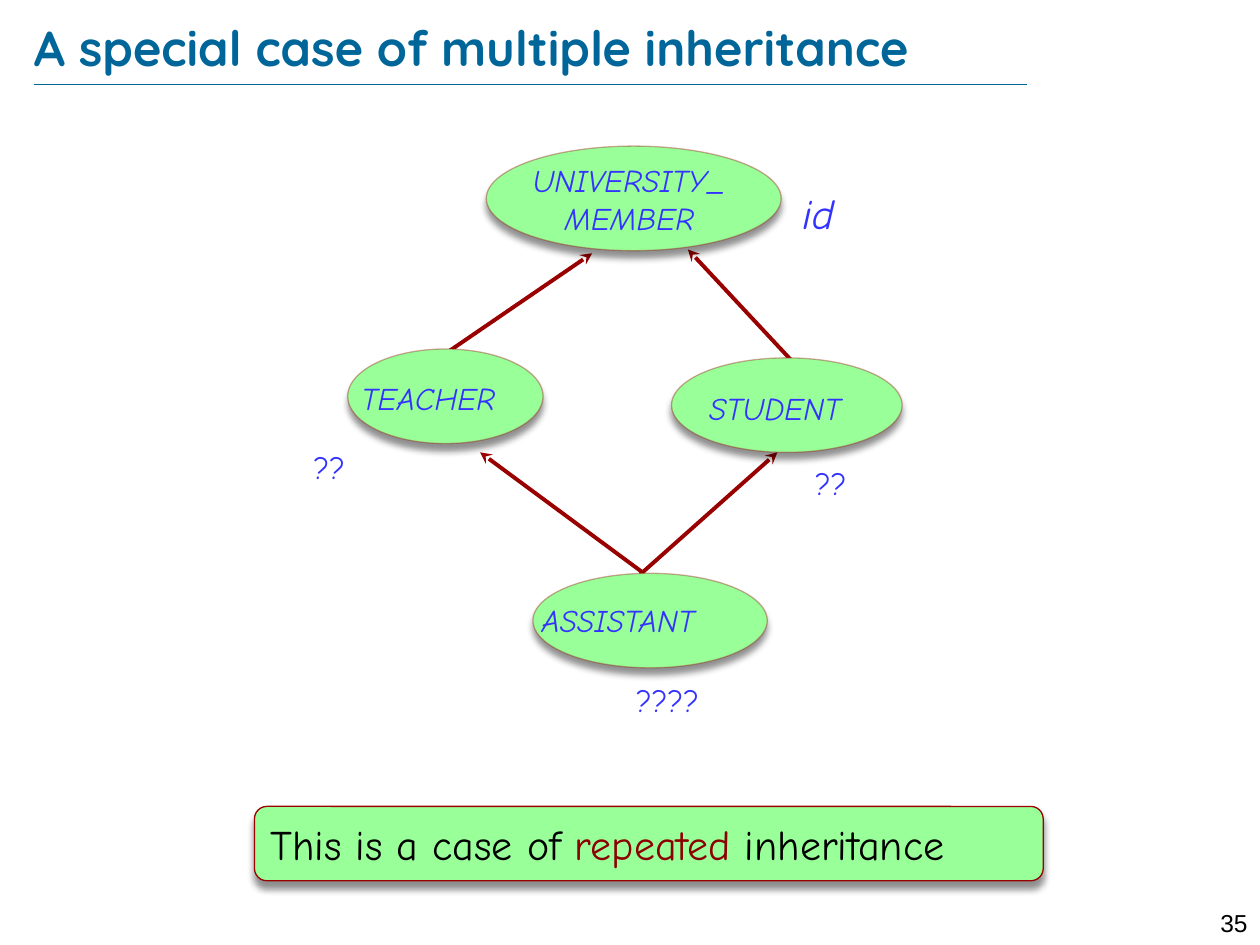
from typing import NamedTuple

from lxml import etree
from pptx import Presentation
from pptx.dml.color import RGBColor
from pptx.enum import shapes, text
from pptx.oxml import ns, parse_xml
from pptx.util import Inches, Pt

BLUE = RGBColor(0x00, 0x66, 0x99)
INK = RGBColor(0x33, 0x33, 0xFF)
GREEN = RGBColor(0x99, 0xFF, 0x99)
RED = RGBColor(0x99, 0x00, 0x00)
DARK = RGBColor(0x8B, 0x00, 0x00)
BLACK = RGBColor(0x00, 0x00, 0x00)
HAND = "Comic Neue"
LEFT, MID, RIGHT = text.PP_ALIGN.LEFT, text.PP_ALIGN.CENTER, text.PP_ALIGN.RIGHT

SHADOW = (
    f'<a:effectLst {ns.nsdecls("a")}>'
    '<a:outerShdw blurRad="50800" dist="50800" dir="5400000" rotWithShape="0">'
    '<a:srgbClr val="000000"><a:alpha val="43000"/></a:srgbClr>'
    "</a:outerShdw></a:effectLst>"
)


class Box(NamedTuple):
    x: float
    y: float
    w: float
    h: float


class Label(NamedTuple):
    words: str
    box: Box
    size: int = 18
    italic: bool = True
    color: RGBColor = INK
    font: str = HAND
    bold: bool = False
    align: text.PP_ALIGN = LEFT


class Arrow(NamedTuple):
    x1: float
    y1: float
    x2: float
    y2: float


NODES = [
    Box(2.76, 2.77, 1.55, 0.75),
    Box(5.33, 2.84, 1.83, 0.75),
    Box(3.86, 1.16, 2.34, 0.83),
    Box(4.23, 4.55, 1.86, 0.75),
]
ARROWS = [
    Arrow(3.56, 2.79, 4.7, 2.01),
    Arrow(6.29, 2.87, 5.46, 1.98),
    Arrow(5.08, 4.56, 6.17, 3.59),
    Arrow(5.11, 4.55, 3.81, 3.59),
]
LABELS = [
    Label("TEACHER", Box(2.77, 2.96, 1.42, 0.4)),
    Label("STUDENT", Box(5.53, 3.04, 1.7, 0.4)),
    Label("ASSISTANT", Box(4.2, 4.72, 1.84, 0.4)),
    Label("UNIVERSITY_MEMBER", Box(4.05, 1.23, 1.89, 0.7), align=MID),
    Label("id", Box(6.27, 1.44, 0.71, 0.5), 24),
    Label("??", Box(6.37, 3.63, 0.71, 0.4), italic=False),
    Label("??", Box(2.39, 3.51, 0.71, 0.4), italic=False),
    Label("????", Box(4.95, 5.36, 1.02, 0.4), italic=False),
    Label("35", Box(9.45, 7.16, 0.55, 0.24), 14, False, BLACK, "Arial", align=RIGHT),
]
TITLE = Label("A special case of multiple inheritance", Box(0.27, 0.13, 9.04, 0.48),
              28, False, BLUE, "Quicksand", True)
CLAIM = [("This is a case of ", BLACK), ("repeated", DARK), (" inheritance", BLACK)]


def add_line(slide, path: Arrow, color: RGBColor, width: float, head: bool = False):
    line = slide.shapes.add_connector(
        shapes.MSO_CONNECTOR.STRAIGHT, *(Inches(v) for v in path))
    line.line.color.rgb = color
    line.line.width = Pt(width)
    if head:
        etree.SubElement(line.line._get_or_add_ln(), ns.qn("a:tailEnd"), type="stealth")
    etree.SubElement(line._element.spPr, ns.qn("a:effectLst"))


def add_solid(slide, kind: shapes.MSO_SHAPE, box: Box):
    """Add a green shape with a thin red edge and a soft shadow below."""
    shape = slide.shapes.add_shape(kind, *(Inches(v) for v in box))
    shape.fill.solid()
    shape.fill.fore_color.rgb = GREEN
    shape.line.color.rgb = RED
    shape.line.width = Pt(0.75)
    shape._element.spPr.append(parse_xml(SHADOW))
    return shape


def add_node(slide, box: Box):
    node = add_solid(slide, shapes.MSO_SHAPE.OVAL, box)
    edge = node.line._get_or_add_ln().find(".//" + ns.qn("a:srgbClr"))
    etree.SubElement(edge, ns.qn("a:alpha"), val="34000")


def add_label(slide, label: Label):
    frame = slide.shapes.add_textbox(*(Inches(v) for v in label.box)).text_frame
    frame.word_wrap = True
    para = frame.paragraphs[0]
    para.text = label.words
    para.alignment = label.align
    font = para.font
    font.name, font.size = label.font, Pt(label.size)
    font.bold, font.italic = label.bold, label.italic
    font.color.rgb = label.color
    return frame


def add_title(slide):
    frame = add_label(slide, TITLE)
    frame.vertical_anchor = text.MSO_ANCHOR.MIDDLE
    frame.margin_left = frame.margin_right = 0
    frame.margin_top = frame.margin_bottom = 0


def add_claim(slide):
    box = Box(2.02, 6.4, 6.26, 0.59)
    frame = add_solid(slide, shapes.MSO_SHAPE.ROUNDED_RECTANGLE, box).text_frame
    frame.vertical_anchor = text.MSO_ANCHOR.MIDDLE
    para = frame.paragraphs[0]
    para.alignment = LEFT
    para.font.name, para.font.size = HAND, Pt(24)
    for words, color in CLAIM:
        run = para.add_run()
        run.text = words
        run.font.color.rgb = color


def main():
    deck = Presentation()
    deck.slide_width, deck.slide_height = Inches(10), Inches(7.5)
    slide = deck.slides.add_slide(deck.slide_layouts[6])
    add_line(slide, Arrow(0.27, 0.67, 8.15, 0.67), BLUE, 0.25)
    for arrow in ARROWS:
        add_line(slide, arrow, RED, 2.25, head=True)
    for box in NODES:
        add_node(slide, box)
    add_title(slide)
    add_claim(slide)
    for label in LABELS:
        add_label(slide, label)
    deck.save("out.pptx")


if __name__ == "__main__":
    main()
